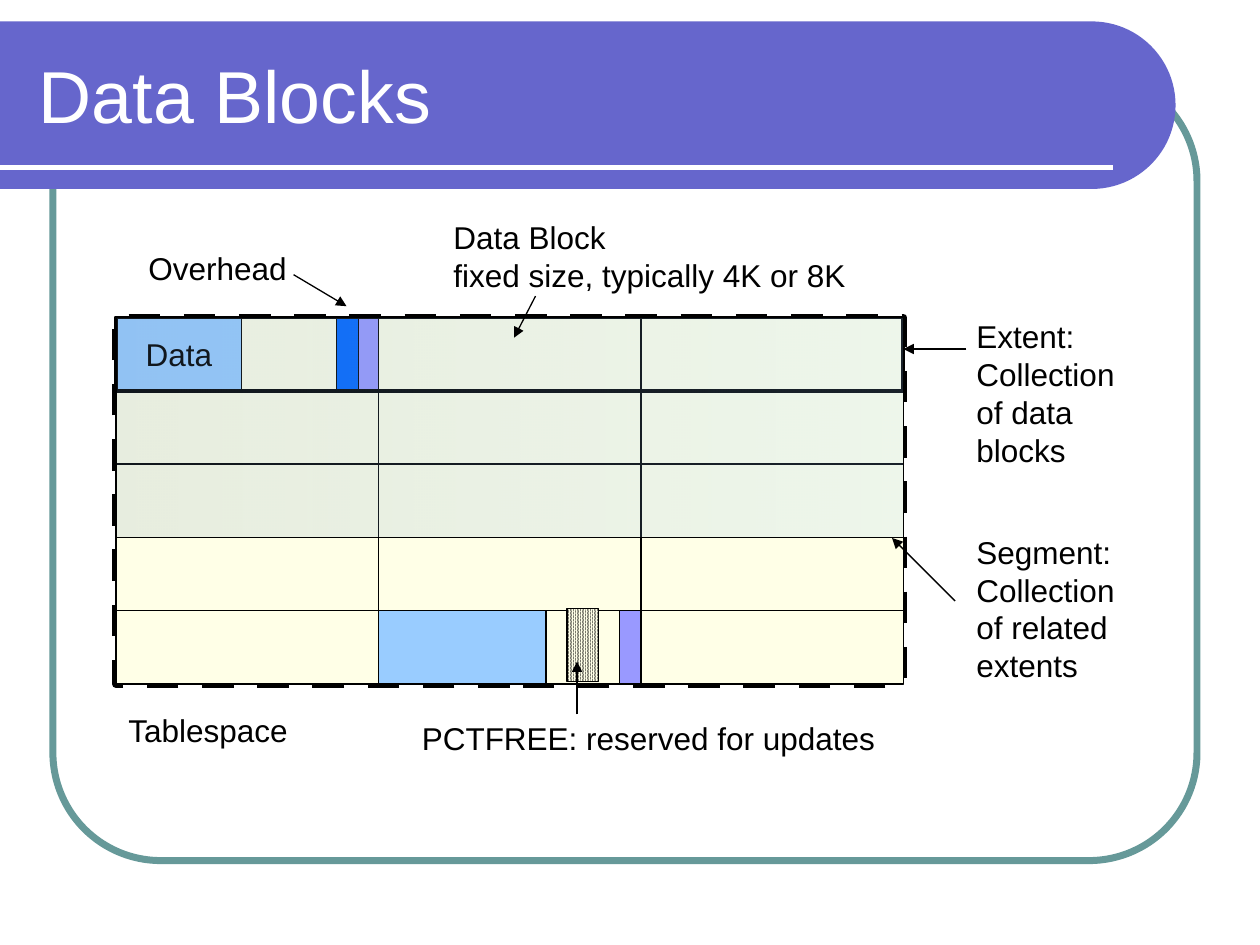
from lxml import etree
from pptx import Presentation
from pptx.dml.color import RGBColor
from pptx.enum.dml import MSO_LINE, MSO_PATTERN
from pptx.enum.shapes import MSO_CONNECTOR, MSO_SHAPE as Geo
from pptx.enum.text import MSO_ANCHOR as Anchor, PP_ALIGN as Align
from pptx.oxml.ns import qn
from pptx.util import Inches, Pt

BLACK = RGBColor(0, 0, 0)
WHITE = RGBColor(255, 255, 255)
TEAL = RGBColor(0x66, 0x99, 0x99)
INDIGO = RGBColor(0x66, 0x66, 0xCC)
CREAM = RGBColor(0xFF, 0xFF, 0xE7)
SKY = RGBColor(0x99, 0xCC, 0xFF)
STEEL = RGBColor(0x6D, 0x92, 0xB6)
LILAC = RGBColor(0x99, 0x99, 0xFF)
BLUE = RGBColor(0x00, 0x66, 0xFF)
OLIVE = RGBColor(0x76, 0x76, 0x6B)


def add_box(slide, box, fill=None, line=BLACK, width=0.75, kind=Geo.RECTANGLE):
    """Add a flat preset shape, with no fill or no line where None is given."""
    shape = slide.shapes.add_shape(kind, *map(Inches, box))
    shape.shadow.inherit = False
    for part, color in ((shape.fill, fill), (shape.line.fill, line)):
        if color is None:
            part.background()
        else:
            part.solid()
            part.fore_color.rgb = color
    if line is not None:
        shape.line.width = Pt(width)
    return shape


def add_line(slide, start, end, color=BLACK, width=0.75, arrow=True):
    """Add a straight line, with an arrowhead at its end if wanted."""
    line = slide.shapes.add_connector(
        MSO_CONNECTOR.STRAIGHT, *map(Inches, (*start, *end)))
    line.line.color.rgb = color
    line.line.width = Pt(width)
    if arrow:
        etree.SubElement(line.line._get_or_add_ln(), qn("a:tailEnd"), type="triangle")
    etree.SubElement(line._element.spPr, qn("a:effectLst"))


def set_text(shape, text, size=18, color=BLACK, wrap=False):
    """Write text into a shape and format its runs."""
    frame = shape.text_frame
    frame.text = text
    frame.word_wrap = wrap
    for para in frame.paragraphs:
        for run in para.runs:
            run.font.name = "Arial"
            run.font.size = Pt(size)
            run.font.color.rgb = color
    return frame


def add_frame(slide, box):
    """Draw the rounded border of the slide body."""
    shape = add_box(slide, box, None, TEAL, 4, Geo.ROUNDED_RECTANGLE)
    shape.adjustments[0] = 0.137


def add_header(slide, box, title):
    """Draw the banner with its round right end, its rule and its title."""
    left, top, width, height = box
    shift = (width - height) / 2
    band = add_box(slide, (left + shift, top - shift, height, width),
                   INDIGO, None, kind=Geo.ROUND_2_SAME_RECTANGLE)
    band.adjustments[0], band.adjustments[1] = 0.5, 0
    band.rotation = 90
    rule = top + 1.16
    add_line(slide, (left, rule), (left + width - 0.5, rule), WHITE, 3, False)
    area = (left + 0.21, top + 0.08, width - 0.56, 1)
    label = slide.shapes.add_textbox(*map(Inches, area))
    set_text(label, title, 42, WHITE, True).vertical_anchor = Anchor.MIDDLE


def add_grid(slide, box, rows=5, cols=3):
    """Draw the tablespace: its blocks, their parts, an extent and a segment."""
    left, top, width, height = box
    wide, high = width / cols, height / rows
    edge = add_box(slide, box, width=4.5)
    edge.line.dash_style = MSO_LINE.DASH
    for row in range(rows):
        for col in range(cols):
            add_box(slide, (left + col * wide, top + row * high, wide, high), CREAM)

    last = (rows - 1) * high
    parts = (
        (wide, last, 1.33, SKY),
        (0, 0, 1, SKY),
        (wide - 0.17, 0, 0.17, LILAC),
        (wide - 0.33, 0, 0.17, BLUE),
        (2 * wide - 0.17, last, 0.17, LILAC),
    )
    for x, y, size, color in parts:
        part = add_box(slide, (left + x, top + y, size, high), color)
        if (x, y) == (0, 0):
            frame = set_text(part, "Data")
            frame.vertical_anchor = Anchor.MIDDLE
            frame.paragraphs[0].alignment = Align.CENTER

    add_box(slide, (left, top, width, high), width=2.25)
    segment = add_box(slide, (left, top, width, 3 * high), CREAM)
    segment.fill.gradient()
    segment.fill.gradient_angle = 0
    for stop, color, alpha in zip(segment.fill.gradient_stops, (STEEL, SKY), (16, 17)):
        stop.color.rgb = color
        tone = stop._gs.find(qn("a:srgbClr"))
        etree.SubElement(tone, qn("a:alpha"), val=str(alpha * 1000))

    spare = add_box(slide, (left + 3.58, top + last - 0.02, 0.25, high), CREAM)
    spare.fill.patterned()
    spare.fill.pattern = MSO_PATTERN.PERCENT_90
    spare.fill.fore_color.rgb = CREAM
    spare.fill.back_color.rgb = OLIVE


def add_notes(slide, box):
    """Place the labels around the grid and the arrows that point into it."""
    left, top, width, height = box
    side = width + 0.48
    labels = (
        (2.58, -0.84, 3.31, 0.7, "Data Block\nfixed size, typically 4K or 8K"),
        (0, height + 0.16, 1.49, 0.4, "Tablespace"),
        (2.33, height + 0.23, 3.8, 0.4, "PCTFREE: reserved for updates"),
        (0.16, -0.59, 1.3, 0.4, "Overhead"),
        (side, -0.05, 1.52, 1.3, "Extent:\nCollection of data blocks"),
        (side, 1.66, 1.52, 1.3, "Segment: Collection of related extents"),
    )
    for x, y, wide, high, text in labels:
        area = (left + x, top + y, wide, high)
        label = slide.shapes.add_textbox(*map(Inches, area))
        set_text(label, text, wrap=x == side)

    arrows = (
        (3.33, -0.17, 3.16, 0.16),
        (width + 0.5, 0.25, width, 0.25),
        (width + 0.41, 2.25, width - 0.09, 1.75),
        (1.41, -0.34, 1.83, -0.09),
        (3.66, 3.15, 3.66, 2.73),
    )
    for x, y, to_x, to_y in arrows:
        add_line(slide, (left + x, top + y), (left + to_x, top + to_y))


def main():
    """Build the slide and save it."""
    deck = Presentation()
    deck.slide_width, deck.slide_height = Inches(10), Inches(7.5)
    slide = deck.slides.add_slide(deck.slide_layouts[6])
    grid = (0.92, 2.52, 6.25, 2.91)
    add_frame(slide, (0.42, 0.58, 9.08, 6.25))
    add_header(slide, (0, 0.17, 9.33, 1.33), "Data Blocks")
    add_grid(slide, grid)
    add_notes(slide, grid)
    deck.save("out.pptx")


if __name__ == "__main__":
    main()
